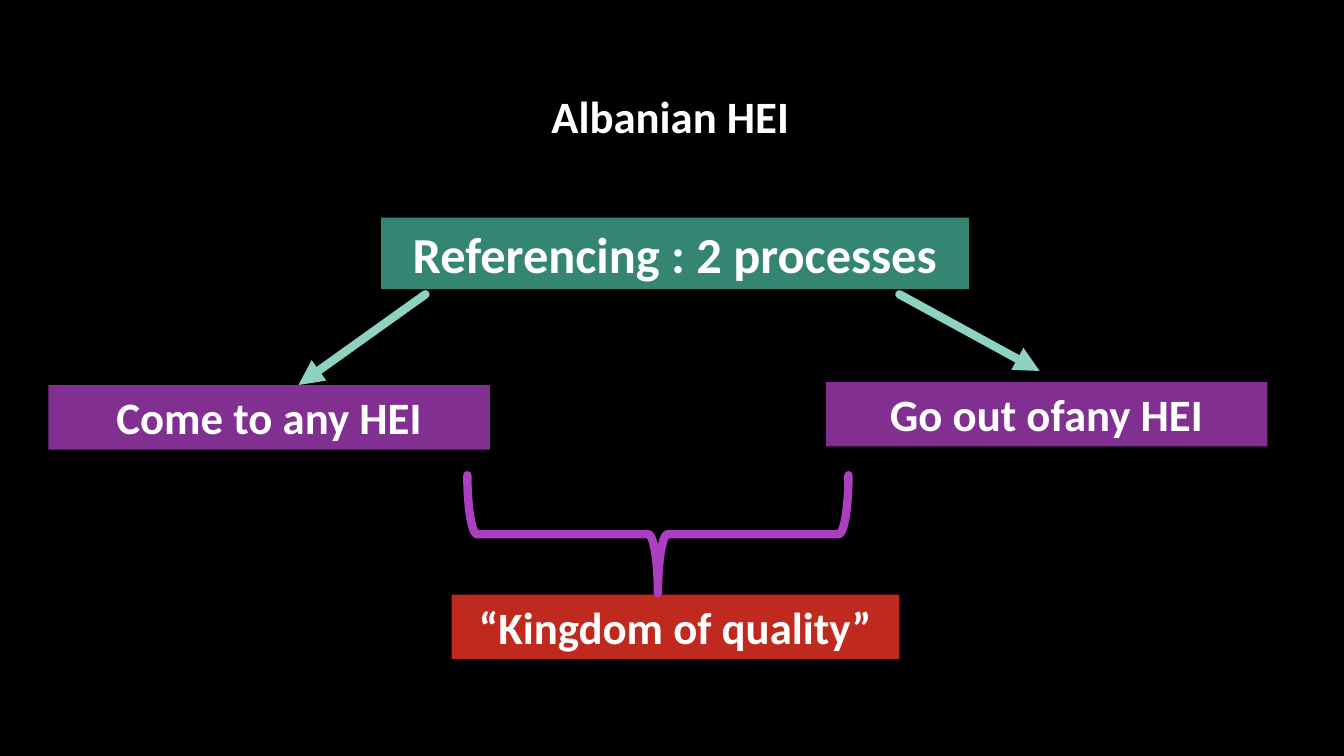
from lxml import etree
from pptx import Presentation
from pptx.dml.color import RGBColor
from pptx.enum import shapes, text
from pptx.oxml.ns import qn
from pptx.util import Inches, Pt


def write_text(shape, content, size=32, color="FFFFFF"):
    frame = shape.text_frame
    frame.word_wrap = True
    frame.auto_size = text.MSO_AUTO_SIZE.SHAPE_TO_FIT_TEXT
    frame.vertical_anchor = text.MSO_ANCHOR.TOP
    paragraph = frame.paragraphs[0]
    paragraph.text = content
    paragraph.alignment = text.PP_ALIGN.CENTER
    paragraph.line_spacing = 1.0
    paragraph.space_before = Pt(0)
    font = paragraph.font
    font.name, font.size, font.bold = "Calibri", Pt(size), True
    font.color.rgb = RGBColor.from_string(color)


def draw_line(shape, color, arrowhead=False):
    """Give a connector or outline a thick, round-capped line."""
    shape.line.color.rgb = RGBColor.from_string(color)
    shape.line.width = Pt(6)
    properties = shape.line._get_or_add_ln()
    properties.set("cap", "rnd")
    if arrowhead:
        etree.SubElement(properties, qn("a:tailEnd"), type="triangle")


presentation = Presentation()
presentation.slide_width = Inches(13.33)
presentation.slide_height = Inches(7.5)
slide = presentation.slides.add_slide(presentation.slide_layouts[5])
slide.background.fill.solid()
slide.background.fill.fore_color.rgb = RGBColor.from_string("000000")

title = slide.shapes.title
title.left, title.top = Inches(4.47), Inches(0.83)
title.width, title.height = Inches(4.36), Inches(0.64)
write_text(title, "Albanian HEI")

boxes = [
    ("Go out ofany HEI", 8.19, 3.79, 4.38, 0.64, "812F91", 32),
    ("Come to any HEI", 0.48, 3.82, 4.38, 0.64, "812F91", 32),
    ("Referencing : 2 processes", 3.78, 2.16, 5.83, 0.71, "348672", 36),
    ("“Kingdom of quality”", 4.48, 5.9, 4.44, 0.64, "C02A1E", 32),
]
for label, left, top, width, height, fill, size in boxes:
    box = slide.shapes.add_shape(
        shapes.MSO_SHAPE.RECTANGLE,
        Inches(left), Inches(top), Inches(width), Inches(height))
    box.shadow.inherit = False
    box.fill.solid()
    box.fill.fore_color.rgb = RGBColor.from_string(fill)
    box.line.fill.background()
    write_text(box, label, size=size)

arrows = [(4.22, 2.92, 2.96, 3.82), (8.92, 2.92, 10.31, 3.68)]
for ends in arrows:
    arrow = slide.shapes.add_connector(
        shapes.MSO_CONNECTOR.STRAIGHT, *[Inches(value) for value in ends])
    draw_line(arrow, "8ED3C2", arrowhead=True)
    etree.SubElement(arrow._element.spPr, qn("a:effectLst"))

brace = slide.shapes.add_shape(
    shapes.MSO_SHAPE.RIGHT_BRACE,
    Inches(5.94), Inches(3.41), Inches(1.17), Inches(3.78))
brace.rotation = 90
brace.shadow.inherit = False
brace.fill.background()
draw_line(brace, "AC3EC1")

presentation.save("out.pptx")
